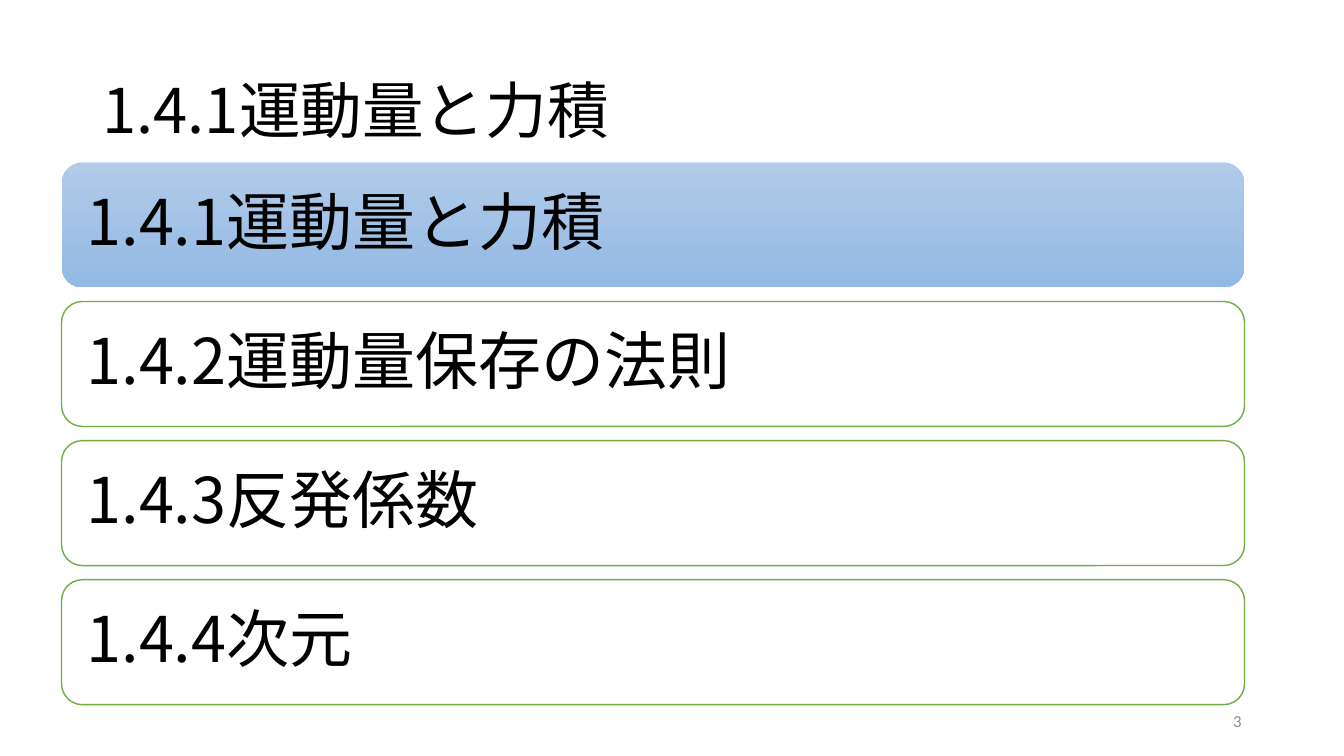
from lxml import etree
from pptx import Presentation
from pptx import util as u
from pptx.dml.color import RGBColor
from pptx.enum import lang, shapes, text
from pptx.oxml import ns

Pt = u.Pt
BLACK = RGBColor(0x00, 0x00, 0x00)
WHITE = RGBColor(0xFF, 0xFF, 0xFF)
GREEN = RGBColor(0x70, 0xAD, 0x47)
GREY = RGBColor(0x8C, 0x8C, 0x8C)
PALE_BLUE = RGBColor(0xB1, 0xCB, 0xE9)
MID_BLUE = RGBColor(0x93, 0xB9, 0xE4)
JAPANESE_FONT = "Noto Sans CJK JP"
NUMBER_FONT = "Calibri"

SECTIONS = ["1.4.1運動量と力積", "1.4.2運動量保存の法則", "1.4.3反発係数", "1.4.4次元"]
CURRENT = 0
BAR_LEFT, BAR_TOP, BAR_WIDTH, BAR_HEIGHT = 44, 116, 845, 89.3
BAR_STEP = 99.36


def apply(target, formats):
    """Set each format value on the target."""
    for name, value in formats.items():
        setattr(target, name, value)


def write(frame, wording, size, font, color, align, spacing=1.0):
    """Write one paragraph, vertically centred, into a text frame."""
    apply(frame, {"word_wrap": True, "vertical_anchor": text.MSO_ANCHOR.MIDDLE})
    line = frame.paragraphs[0]
    apply(line, {"alignment": align, "line_spacing": spacing})
    words = line.add_run()
    words.text = wording
    apply(words.font, {"name": font, "size": Pt(size),
                       "language_id": lang.MSO_LANGUAGE_ID.JAPANESE})
    words.font.color.rgb = color
    latin = words.font._element.find(ns.qn("a:latin"))
    east_asian = etree.Element(ns.qn("a:ea"), typeface=font)
    latin.addnext(east_asian)


def add_label(slide, box, *style):
    """Add a text box at the given place."""
    label = slide.shapes.add_textbox(*map(Pt, box))
    write(label.text_frame, *style)


def add_section_bar(slide, index, wording):
    """Add one rounded section bar, highlighted if it is the current one."""
    bar = slide.shapes.add_shape(
        shapes.MSO_SHAPE.ROUNDED_RECTANGLE, Pt(BAR_LEFT),
        Pt(BAR_TOP + index * BAR_STEP), Pt(BAR_WIDTH), Pt(BAR_HEIGHT))
    bar.shadow.inherit = False
    if index == CURRENT:
        bar.fill.gradient()
        bar.fill.gradient_angle = 270
        for stop, color in zip(bar.fill.gradient_stops, (PALE_BLUE, MID_BLUE)):
            stop.color.rgb = color
        for stop, position in zip(bar.fill.gradient_stops, (0, 1)):
            stop.position = position
        bar.line.fill.background()
    else:
        bar.fill.solid()
        bar.fill.fore_color.rgb = WHITE
        bar.line.color.rgb = GREEN
        bar.line.width = Pt(1)
    sides = ("left", "top", "right", "bottom")
    apply(bar.text_frame, {f"margin_{side}": Pt(13.5) for side in sides})
    write(bar.text_frame, wording, 45, JAPANESE_FONT, BLACK, text.PP_ALIGN.LEFT, 0.9)


def main():
    """Build the section overview slide."""
    deck = Presentation()
    apply(deck, {"slide_width": Pt(960), "slide_height": Pt(540)})
    slide = deck.slides.add_slide(deck.slide_layouts[6])
    add_label(slide, (66, 28.75, 828, 104.4), SECTIONS[CURRENT], 44,
              JAPANESE_FONT, BLACK, text.PP_ALIGN.LEFT, 0.9)
    for index, wording in enumerate(SECTIONS):
        add_section_bar(slide, index, wording)
    add_label(slide, (678, 500.5, 216, 28.75), "3", 12,
              NUMBER_FONT, GREY, text.PP_ALIGN.RIGHT)
    deck.save("out.pptx")


if __name__ == "__main__":
    main()
